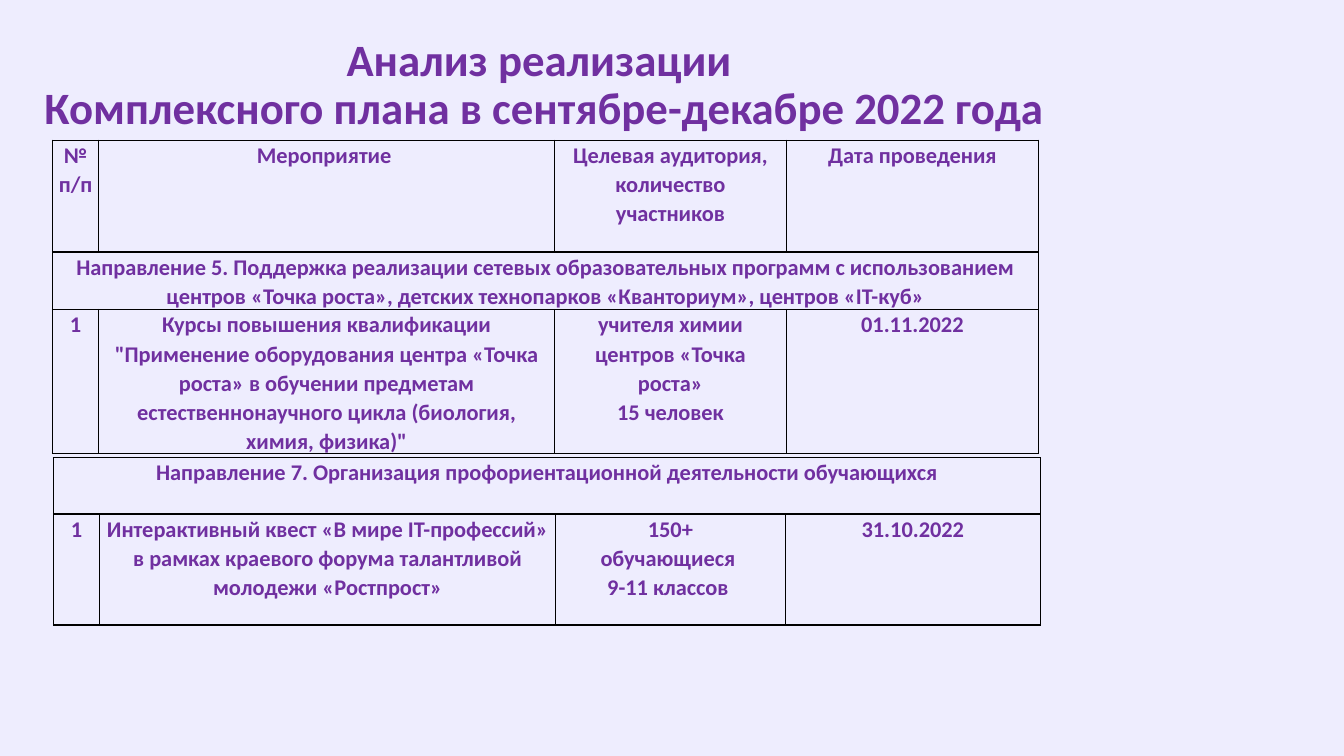
from lxml import etree
from pptx import Presentation
from pptx.dml.color import RGBColor
from pptx.enum import text
from pptx.oxml import ns
from pptx.util import Inches, Pt

PURPLE = RGBColor(0x70, 0x30, 0xA0)
LILAC = RGBColor(0xEE, 0xED, 0xFE)
BLACK = RGBColor(0, 0, 0)
FONT = "Calibri"

HEAD = ["№ п/п", "Мероприятие ", "Целевая аудитория, количество участников",
        "Дата проведения"]
NETWORK = [
    HEAD,
    ["Направление 5. Поддержка реализации сетевых образовательных программ "
     "с использованием центров «Точка роста», детских технопарков "
     "«Кванториум», центров «IT-куб»"],
    ["1",
     "Курсы повышения квалификации \"Применение оборудования центра «Точка "
     "роста» в обучении предметам естественнонаучного цикла (биология, "
     "химия, физика)\"",
     "учителя химии центров «Точка роста»\n15 человек",
     "01.11.2022"],
]
CAREER = [
    ["Направление 7. Организация профориентационной деятельности обучающихся"],
    ["1",
     "Интерактивный квест «В мире IT-профессий» в рамках краевого форума "
     "талантливой молодежи «Ростпрост»",
     "150+\nобучающиеся \n9-11 классов ",
     "31.10.2022"],
]


def add_run(para, words, size):
    run = para.add_run()
    run.text = words
    font = run.font
    font.name, font.size, font.bold = FONT, Pt(size), True
    font.color.rgb = PURPLE


def add_title(slide, lines, left, top, width, height):
    box = slide.shapes.add_textbox(
        Inches(left), Inches(top), Inches(width), Inches(height))
    frame = box.text_frame
    frame.word_wrap = True
    frame.vertical_anchor = text.MSO_ANCHOR.MIDDLE
    para = frame.paragraphs[0]
    para.alignment = text.PP_ALIGN.CENTER
    para.line_spacing = 0.9
    for i, line in enumerate(lines):
        if i:
            para.add_line_break()
        add_run(para, line, 32)


def add_edges(cell):
    """Draw thin black borders; they must come before the fill."""
    props = cell._tc.get_or_add_tcPr()
    for i, side in enumerate(("lnL", "lnR", "lnT", "lnB")):
        edge = etree.Element(ns.qn(f"a:{side}"), w=str(Pt(1)))
        fill = etree.SubElement(edge, ns.qn("a:solidFill"))
        etree.SubElement(fill, ns.qn("a:srgbClr"), val=str(BLACK))
        props.insert(i, edge)


def fill_cell(cell, words, pad):
    cell.margin_left = cell.margin_right = Inches(pad)
    cell.margin_top = cell.margin_bottom = 0
    frame = cell.text_frame
    for i, line in enumerate(words.split("\n")):
        para = frame.add_paragraph() if i else frame.paragraphs[0]
        para.alignment = text.PP_ALIGN.CENTER
        para.line_spacing = 1.07
        add_run(para, line, 16)


def add_plan(slide, rows, left, top, widths, heights):
    """Add a table in which a row of one text spans all columns."""
    frame = slide.shapes.add_table(
        len(rows), len(widths), Inches(left), Inches(top),
        Inches(sum(widths)), Inches(sum(heights)))
    table = frame.table
    table.first_row = table.horz_banding = False
    for col, width in zip(table.columns, widths):
        col.width = Inches(width)
    for r, (row, height) in enumerate(zip(rows, heights)):
        table.rows[r].height = Inches(height)
        for c in range(len(widths)):
            cell = table.cell(r, c)
            cell.fill.background()
            add_edges(cell)
        if len(row) == 1:
            table.cell(r, 0).merge(table.cell(r, len(widths) - 1))
        for c, words in enumerate(row):
            fill_cell(table.cell(r, c), words, 0.06 if c else 0.05)


def main():
    deck = Presentation()
    deck.slide_width, deck.slide_height = Inches(13.33), Inches(7.5)
    slide = deck.slides.add_slide(deck.slide_layouts[6])
    back = slide.background.fill
    back.solid()
    back.fore_color.rgb = LILAC
    add_title(slide, ["Анализ реализации ",
                      "Комплексного плана в сентябре-декабре 2022 года "],
              0.32, 0.13, 10.16, 1.45)
    add_plan(slide, NETWORK, 0.52, 1.39,
             [0.46, 4.52, 2.3, 2.5], [1.11, 0.56, 1.43])
    add_plan(slide, CAREER, 0.53, 4.54,
             [0.46, 4.52, 2.28, 2.53], [0.56, 1.1])
    deck.save("out.pptx")


if __name__ == "__main__":
    main()
